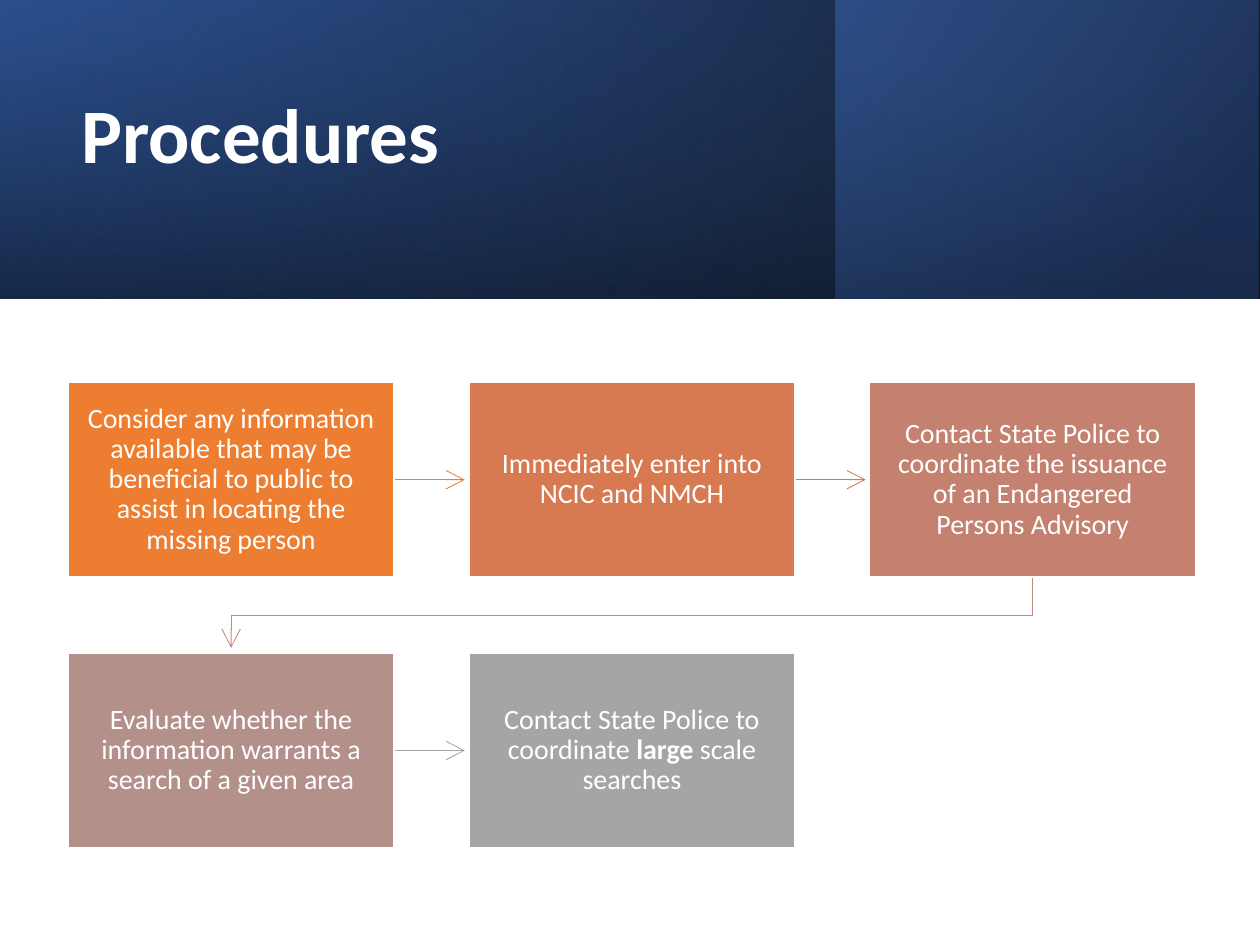
from lxml.etree import SubElement
from pptx import Presentation
from pptx.dml.color import RGBColor
from pptx.enum.shapes import MSO_CONNECTOR as Link, MSO_SHAPE as Shape
from pptx.enum.text import MSO_ANCHOR as Anchor, MSO_AUTO_SIZE as Auto, PP_ALIGN as Align
from pptx.oxml.ns import qn
from pptx.util import Cm, Pt

WHITE = "FFFFFF"
COLS = 3
LEFT, TOP = 1.37, 7.7
WIDE, HIGH = 6.58, 3.94
STEP_X, STEP_Y = 8.08, 5.46
REACH = 1.42  # arrow length between neighbouring boxes
BEND = 0.76   # drop before the arrow turns to the next row

BANDS = [  # left, top, width, height, rotation, angle, stops (place, colour, opacity)
    (0, 0, 25.4, 6.02, 0, 330, [(0, "000000", 96), (100, "2F5597", 100)]),
    (16.84, 0, 8.53, 6.02, 0, 320, [(19, "203864", 68), (100, "4472C4", 48)]),
    (9.69, -9.69, 6.02, 25.4, 270, 350, [(23, "2F5597", 16), (99, "000000", 45)]),
]
STEPS = [  # fill, runs (text, bold)
    ("ED7D31", [("Consider any information available that may be beneficial "
                 "to public to assist in locating the missing person", False)]),
    ("D87A51", [("Immediately enter into NCIC and NMCH", False)]),
    ("C48170", [("Contact State Police to coordinate the issuance of an "
                 "Endangered Persons Advisory", False)]),
    ("B4908B", [("Evaluate whether the information warrants a search of a "
                 "given area", False)]),
    ("A5A5A5", [("Contact State Police to coordinate ", False), ("large ", True),
                ("scale searches", False)]),
]
LINKS = ["ED7D31", "D17B5C", "B98A82", "A5A5A5"]


def rgb(code):
    return RGBColor.from_string(code)


def add_runs(para, runs, size, align):
    para.alignment = align
    para.line_spacing = 0.9
    for text, bold in runs:
        run = para.add_run()
        run.text = text
        font = run.font
        font.name, font.size, font.bold = "Calibri", Pt(size), bold
        font.color.rgb = rgb(WHITE)


def fade(shape, angle, stops):
    """Fill with a gradient whose stops may be see-through."""
    shape.fill.gradient()
    grad = shape.fill._xPr.find(qn("a:gradFill"))
    for node in list(grad):
        grad.remove(node)
    grad.set("rotWithShape", "1")
    group = SubElement(grad, qn("a:gsLst"))
    for place, code, alpha in stops:
        stop = SubElement(group, qn("a:gs"), pos=str(place * 1000))
        tint = SubElement(stop, qn("a:srgbClr"), val=code)
        SubElement(tint, qn("a:alpha"), val=str(alpha * 1000))
    SubElement(grad, qn("a:lin"), ang=str(angle * 60000), scaled="0")


def add_band(slide, left, top, width, height, turn, angle, stops):
    band = slide.shapes.add_shape(Shape.RECTANGLE, Cm(left), Cm(top), Cm(width), Cm(height))
    band.shadow.inherit = False
    band.line.fill.background()
    band.rotation = turn
    band._element.spPr.find(qn("a:xfrm")).set("flipH", "1")
    fade(band, angle, stops)


def add_title(slide, text):
    title = slide.shapes.title
    title.left, title.top, title.width, title.height = Cm(1.07), Cm(1.09), Cm(8.05), Cm(2.67)
    frame = title.text_frame
    frame.auto_size = Auto.NONE
    frame.word_wrap = True
    frame.vertical_anchor = Anchor.BOTTOM
    add_runs(frame.paragraphs[0], [(text, True)], 44, Align.RIGHT)
    slide.shapes._spTree.append(title._element)  # in front of the bands


def spot(index):
    """Left and top of a step box in the grid."""
    row, col = divmod(index, COLS)
    return LEFT + col * STEP_X, TOP + row * STEP_Y


def add_step(slide, index, fill, runs):
    left, top = spot(index)
    box = slide.shapes.add_shape(Shape.RECTANGLE, Cm(left), Cm(top), Cm(WIDE), Cm(HIGH))
    box.shadow.inherit = False
    box.fill.solid()
    box.fill.fore_color.rgb = rgb(fill)
    box.line.color.rgb = rgb(WHITE)
    box.line.width = Pt(1)
    frame = box.text_frame
    frame.word_wrap = True
    frame.vertical_anchor = Anchor.MIDDLE
    frame.margin_left = frame.margin_right = Cm(0.33)
    frame.margin_top = frame.margin_bottom = Cm(0.33)
    add_runs(frame.paragraphs[0], runs, 16, Align.CENTER)


def add_elbow(slide, points):
    spots = [(Cm(x), Cm(y)) for x, y in points]
    form = slide.shapes.build_freeform(*spots[0])
    form.add_line_segments(spots[1:], close=False)
    elbow = form.convert_to_shape()
    elbow.fill.background()
    return elbow


def add_link(slide, index, code):
    """Arrow from a step to the next one, bent where the row ends."""
    left, top = spot(index)
    if (index + 1) % COLS:
        x, y = left + WIDE, top + HIGH / 2
        link = slide.shapes.add_connector(Link.STRAIGHT, Cm(x), Cm(y), Cm(x + REACH), Cm(y))
    else:
        x, y = left + WIDE / 2, top + HIGH
        end = LEFT + WIDE / 2
        link = add_elbow(slide, [(x, y), (x, y + BEND), (end, y + BEND), (end, y + REACH)])
    link.line.color.rgb = rgb(code)
    link.line.width = Pt(0.5)
    SubElement(link.line._get_or_add_ln(), qn("a:tailEnd"), type="arrow", w="lg", len="lg")
    SubElement(link._element.spPr, qn("a:effectLst"))


def main():
    deck = Presentation()
    deck.slide_width, deck.slide_height = Cm(25.4), Cm(19.05)
    slide = deck.slides.add_slide(deck.slide_layouts[5])
    for band in BANDS:
        add_band(slide, *band)
    for index, code in enumerate(LINKS):
        add_link(slide, index, code)
    for index, (fill, runs) in enumerate(STEPS):
        add_step(slide, index, fill, runs)
    add_title(slide, "Procedures")
    deck.save("out.pptx")


if __name__ == "__main__":
    main()
